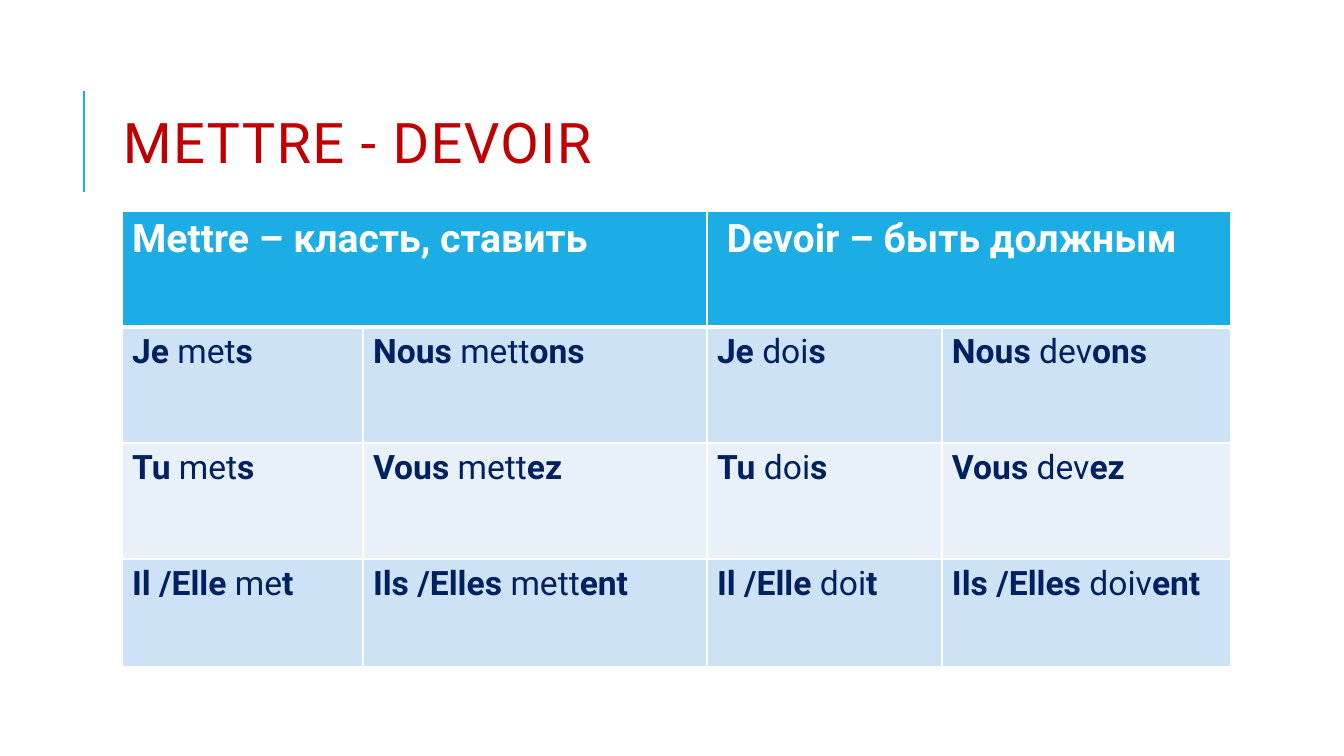
from lxml.etree import SubElement
from pptx import Presentation
from pptx.dml.color import RGBColor
from pptx.enum.shapes import MSO_CONNECTOR as Connector
from pptx.enum.text import MSO_ANCHOR as Anchor
from pptx.oxml.ns import qn
from pptx.util import Emu, Pt

COLORS = {
    "accent": "1CADE4",
    "title": "C00000",
    "ink": "002060",
    "band_dark": "CDE3F5",
    "band_light": "E8F1FA",
    "white": "FFFFFF",
}
PRONOUNS = [("Je ", "Nous "), ("Tu ", "Vous "), ("Il /Elle ", "Ils /Elles ")]
METTRE = [("met|s", "mett|ons"), ("met|s", "mett|ez"), ("me|t", "mett|ent")]
DEVOIR = [("doi|s", "dev|ons"), ("doi|s", "dev|ez"), ("doi|t", "doiv|ent")]


def px(length):
    return Emu(round(length * 914400 / 100.8))


def color(name):
    return RGBColor.from_string(COLORS[name])


def add_text(paragraph, text, size=24, ink="ink", bold=False, spacing=None):
    run = paragraph.add_run()
    run.text = text
    run.font.name = "Roboto"
    run.font.size = Pt(size)
    run.font.bold = bold
    run.font.color.rgb = color(ink)
    if spacing is not None:
        run.font._element.set("spc", str(spacing * 100))


class VerbSlide:
    def __init__(self, deck):
        self.slide = deck.slides.add_slide(deck.slide_layouts[6])
        self.shapes = self.slide.shapes

    def rule(self, x, start, end):
        rule = self.shapes.add_connector(
            Connector.STRAIGHT, px(x), px(start), px(x), px(end))
        rule.line.color.rgb = color("accent")
        rule.line.width = Pt(1.5)
        SubElement(rule._element.spPr, qn("a:effectLst"))

    def title(self, text, left, top, width, height):
        frame = self.shapes.add_textbox(
            px(left), px(top), px(width), px(height)).text_frame
        frame.word_wrap = True
        frame.vertical_anchor = Anchor.MIDDLE
        paragraph = frame.paragraphs[0]
        paragraph.line_spacing = 0.8
        add_text(paragraph, text, size=40, ink="title", spacing=1)

    def table(self, left, top, widths, heights):
        table = self.shapes.add_table(
            len(heights), len(widths), px(left), px(top),
            px(sum(widths)), px(sum(heights))).table
        for column, width in zip(table.columns, widths):
            column.width = px(width)
        for row, height in zip(table.rows, heights):
            row.height = px(height)
        return table

    def style_cell(self, cell, fill, top=1, bottom=1):
        properties = cell._tc.get_or_add_tcPr()
        for side, width in (("L", 1), ("R", 1), ("T", top), ("B", bottom)):
            border = SubElement(properties, qn(f"a:ln{side}"), w=str(Pt(width)))
            solid = SubElement(border, qn("a:solidFill"))
            SubElement(solid, qn("a:srgbClr"), val=COLORS["white"])
        cell.fill.solid()
        cell.fill.fore_color.rgb = color(fill)


def main():
    deck = Presentation()
    deck.slide_width, deck.slide_height = px(1344), px(756)
    page = VerbSlide(deck)
    page.rule(84, 192, 91)
    page.title("METTRE - DEVOIR", 113, 65, 1072, 165)
    verbs = page.table(122, 211, [241, 344, 235, 289], [116, 116, 116, 108])

    for column in range(4):
        page.style_cell(verbs.cell(0, column), "accent", bottom=3)
    headings = ["Mettre – класть, ставить", " Devoir – быть должным"]
    for index, heading in enumerate(headings):
        header = verbs.cell(0, index * 2)
        header.merge(verbs.cell(0, index * 2 + 1))
        add_text(header.text_frame.paragraphs[0], heading,
                 size=28, ink="white", bold=True)

    for row, (pronouns, mettre, devoir) in enumerate(
            zip(PRONOUNS, METTRE, DEVOIR), start=1):
        band = "band_dark" if row % 2 else "band_light"
        for column, (pronoun, form) in enumerate(
                zip(pronouns * 2, mettre + devoir)):
            cell = verbs.cell(row, column)
            page.style_cell(cell, band, top=3 if row == 1 else 1)
            paragraph = cell.text_frame.paragraphs[0]
            stem, ending = form.split("|")
            add_text(paragraph, pronoun, bold=True)
            add_text(paragraph, stem)
            add_text(paragraph, ending, bold=True)

    deck.save("out.pptx")


if __name__ == "__main__":
    main()
